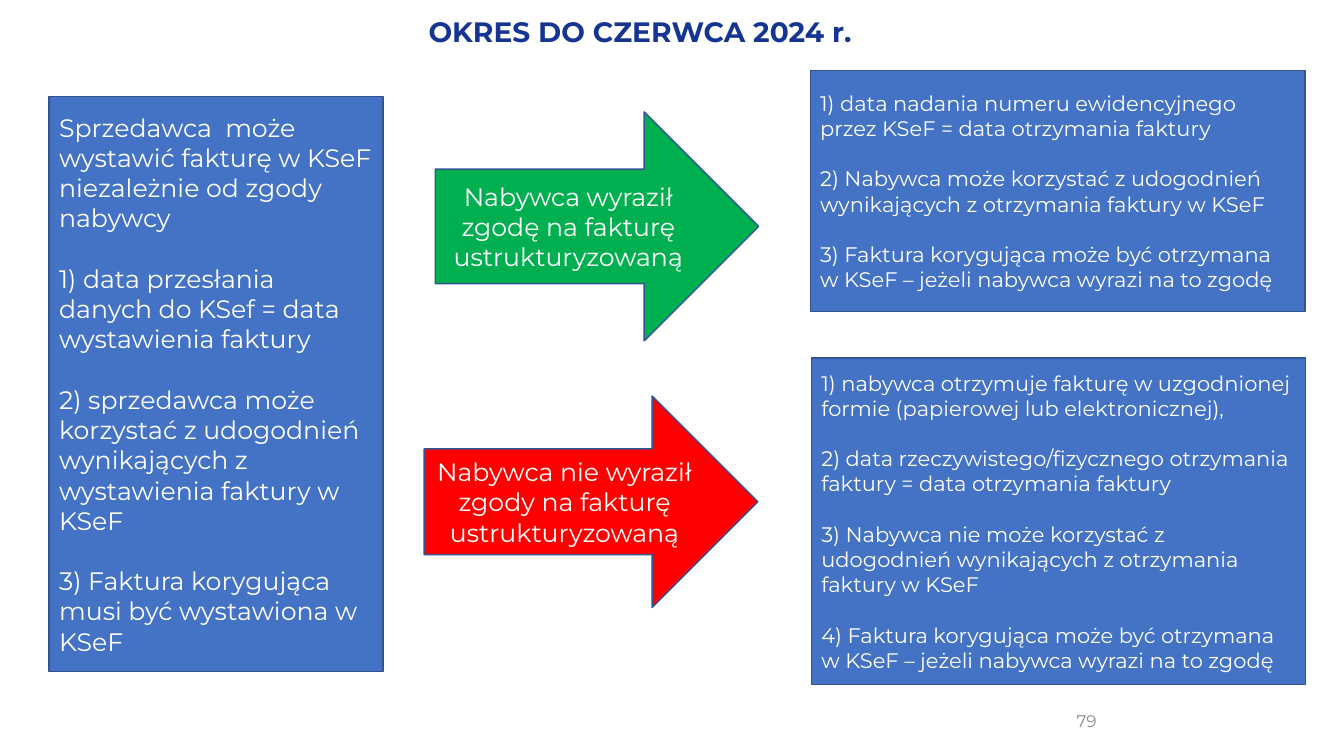
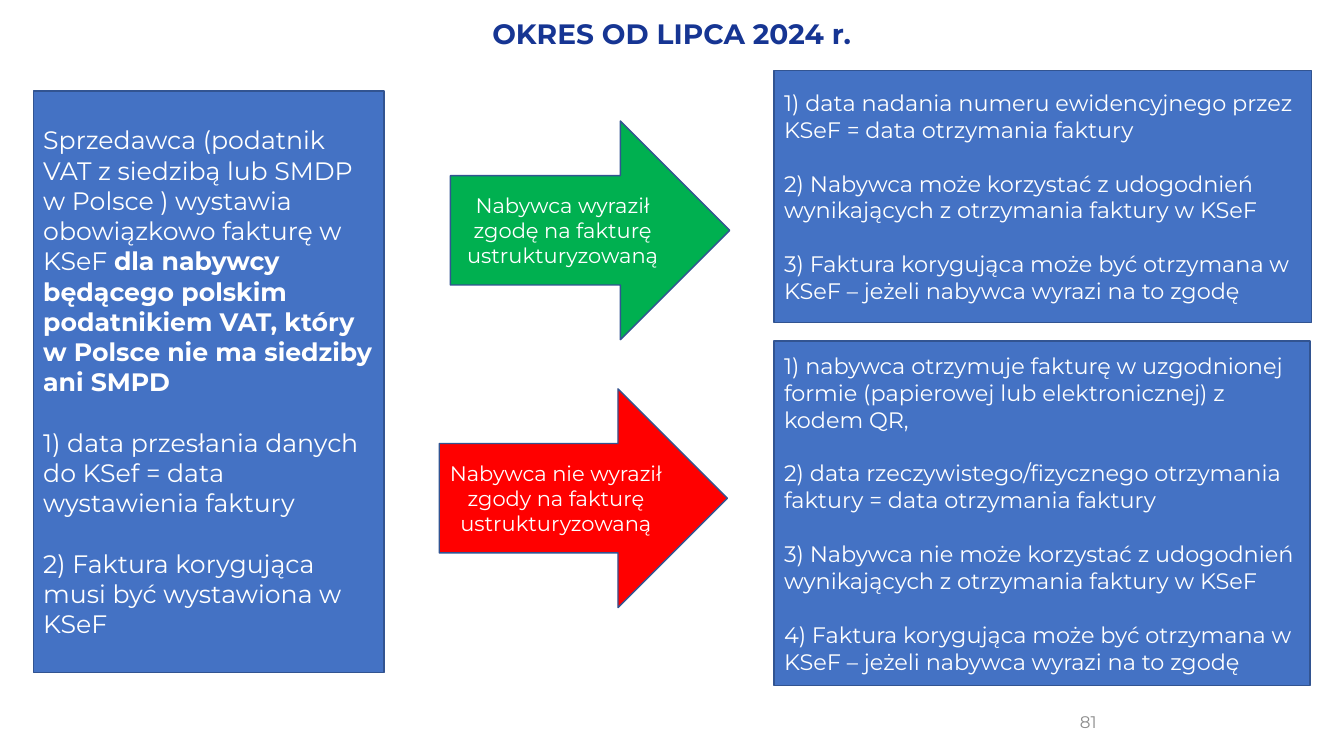
from dataclasses import dataclass
from typing import NamedTuple

from pptx import Presentation
from pptx.dml.color import RGBColor
from pptx.enum.shapes import MSO_SHAPE
from pptx.enum.text import MSO_ANCHOR, MSO_AUTO_SIZE, PP_ALIGN
from pptx.slide import Slide
from pptx.text.text import TextFrame
from pptx.util import Cm, Pt


@dataclass(frozen=True)
class Theme:
    """Colours, font and type sizes shared by the pages."""

    font: str = "Montserrat"
    title: str = "163593"
    panel: str = "4472C4"
    outline: str = "325491"
    consent: str = "00B050"
    refusal: str = "FF0000"
    light: str = "FFFFFF"
    number: str = "8C8C8C"
    title_size: int = 20
    body_size: int = 18
    number_size: int = 12
    line_pitch: float = 1.2


THEME = Theme()


class Frame(NamedTuple):
    """Left, top, width and height in centimetres."""

    left: float
    top: float
    width: float
    height: float

    def lengths(self) -> tuple[Cm, ...]:
        """Return the four values as lengths."""
        return tuple(Cm(value) for value in self)


@dataclass(frozen=True)
class Panel:
    """A filled box whose first paragraph may end in bold."""

    frame: Frame
    paragraphs: tuple[str, ...]
    size: int
    emphasis: str = ""


@dataclass(frozen=True)
class Arrow:
    """A coloured block arrow with a centred label."""

    frame: Frame
    label: str
    fill: str
    size: int


@dataclass(frozen=True)
class Period:
    """Everything that one page shows."""

    title: str
    title_frame: Frame
    number: str
    number_frame: Frame
    panels: tuple[Panel, ...]
    arrows: tuple[Arrow, ...]


CONSENT = "Nabywca wyraził zgodę na fakturę ustrukturyzowaną"
REFUSAL = "Nabywca nie wyraził zgody na fakturę ustrukturyzowaną"
SENDING = "1) data przesłania danych do KSef = data wystawienia faktury"
SELLER_CORRECTION = "Faktura korygująca musi być wystawiona w KSeF"
BUYER_CORRECTION = (
    "Faktura korygująca może być otrzymana w KSeF – jeżeli nabywca wyrazi na to zgodę"
)
WITH_CONSENT = (
    "1) data nadania numeru ewidencyjnego przez KSeF = data otrzymania faktury",
    "2) Nabywca może korzystać z udogodnień wynikających z otrzymania faktury w KSeF",
    f"3) {BUYER_CORRECTION}",
)


def without_consent(ending: str) -> tuple[str, ...]:
    """Return the rules for a buyer who refused, varying the end of the first."""
    return (
        "1) nabywca otrzymuje fakturę w uzgodnionej formie "
        f"(papierowej lub elektronicznej){ending}",
        "2) data rzeczywistego/fizycznego otrzymania faktury = data otrzymania faktury",
        "3) Nabywca nie może korzystać z udogodnień wynikających z otrzymania faktury w KSeF",
        f"4) {BUYER_CORRECTION}",
    )


PERIODS = (
    Period(
        title="OKRES DO CZERWCA 2024 r.",
        title_frame=Frame(10.21, 0.23, 11.84, 1.12),
        number="79",
        number_frame=Frame(22.17, 17.65, 5.72, 1.02),
        panels=(
            Panel(
                Frame(1.24, 2.44, 8.41, 14.48),
                (
                    "Sprzedawca  może wystawić fakturę w KSeF niezależnie od zgody nabywcy",
                    SENDING,
                    "2) sprzedawca może korzystać z udogodnień wynikających "
                    "z wystawienia faktury w KSeF",
                    f"3) {SELLER_CORRECTION}",
                ),
                THEME.body_size,
            ),
            Panel(Frame(20.42, 1.78, 12.47, 6.07), WITH_CONSENT, 15),
            Panel(Frame(20.45, 9.02, 12.45, 8.23), without_consent(","), 15),
        ),
        arrows=(
            Arrow(Frame(10.97, 2.82, 8.15, 5.77), CONSENT, THEME.consent, 18),
            Arrow(Frame(10.69, 9.98, 8.41, 5.33), REFUSAL, THEME.refusal, 18),
        ),
    ),
    Period(
        title="OKRES OD LIPCA 2024 r.",
        title_frame=Frame(11.71, 0.28, 10.44, 1.12),
        number="81",
        number_frame=Frame(22.28, 17.7, 5.61, 0.97),
        panels=(
            Panel(
                Frame(0.84, 2.29, 8.84, 14.66),
                (
                    "Sprzedawca (podatnik VAT z siedzibą lub SMDP w Polsce ) "
                    "wystawia obowiązkowo fakturę w KSeF ",
                    SENDING,
                    f"2) {SELLER_CORRECTION}",
                ),
                THEME.body_size,
                "dla nabywcy będącego polskim podatnikiem VAT, "
                "który w Polsce nie ma siedziby ani SMPD",
            ),
            Panel(Frame(19.51, 1.78, 13.54, 6.35), WITH_CONSENT, 16),
            Panel(Frame(19.51, 8.59, 13.51, 8.69), without_consent(" z kodem QR,"), 16),
        ),
        arrows=(
            Arrow(Frame(11.35, 3.05, 7.04, 5.51), CONSENT, THEME.consent, 15),
            Arrow(Frame(11.07, 9.8, 7.26, 5.51), REFUSAL, THEME.refusal, 15),
        ),
    ),
)


def write_text(
    frame: TextFrame,
    paragraphs: tuple[str, ...],
    *,
    size: int,
    colour: str = THEME.light,
    bold: bool = False,
    emphasis: str = "",
    align: PP_ALIGN = PP_ALIGN.LEFT,
    anchor: MSO_ANCHOR = MSO_ANCHOR.MIDDLE,
) -> None:
    """Write paragraphs one line apart, with an optional bold end to the first."""
    frame.word_wrap = True
    frame.auto_size = MSO_AUTO_SIZE.NONE
    frame.vertical_anchor = anchor
    for index, text in enumerate(paragraphs):
        para = frame.add_paragraph() if index else frame.paragraphs[0]
        para.alignment = align
        para.space_before = Pt(size * THEME.line_pitch if index else 0)
        spans = [(text, bold)]
        if emphasis and index == 0:
            spans.append((emphasis, True))
        for words, heavy in spans:
            span = para.add_run()
            span.text = words
            span.font.name = THEME.font
            span.font.size = Pt(size)
            span.font.bold = heavy
            span.font.color.rgb = RGBColor.from_string(colour)


def add_block(page: Slide, kind: MSO_SHAPE, frame: Frame, fill: str) -> TextFrame:
    """Add an outlined, filled shape and return its text frame."""
    box = page.shapes.add_shape(kind, *frame.lengths())
    box.shadow.inherit = False
    box.fill.solid()
    box.fill.fore_color.rgb = RGBColor.from_string(fill)
    box.line.color.rgb = RGBColor.from_string(THEME.outline)
    box.line.width = Pt(1)
    return box.text_frame


def add_title(page: Slide, text: str, frame: Frame) -> None:
    """Place and format the title placeholder."""
    title = page.shapes.title
    title.left, title.top, title.width, title.height = frame.lengths()
    write_text(
        title.text_frame,
        (text,),
        size=THEME.title_size,
        colour=THEME.title,
        bold=True,
        align=PP_ALIGN.CENTER,
        anchor=MSO_ANCHOR.TOP,
    )


def add_page(deck: Presentation, period: Period) -> None:
    """Build the page for one period."""
    page = deck.slides.add_slide(deck.slide_layouts[5])
    add_title(page, period.title, period.title_frame)
    for panel in period.panels:
        text = add_block(page, MSO_SHAPE.RECTANGLE, panel.frame, THEME.panel)
        write_text(text, panel.paragraphs, size=panel.size, emphasis=panel.emphasis)
    for arrow in period.arrows:
        text = add_block(page, MSO_SHAPE.RIGHT_ARROW, arrow.frame, arrow.fill)
        write_text(text, (arrow.label,), size=arrow.size, align=PP_ALIGN.CENTER)
    number = page.shapes.add_textbox(*period.number_frame.lengths())
    write_text(
        number.text_frame,
        (period.number,),
        size=THEME.number_size,
        colour=THEME.number,
        align=PP_ALIGN.RIGHT,
    )


def main() -> None:
    """Build and save the deck."""
    deck = Presentation()
    deck.slide_width, deck.slide_height = Cm(33.87), Cm(19.05)
    for period in PERIODS:
        add_page(deck, period)
    deck.save("out.pptx")


if __name__ == "__main__":
    main()
